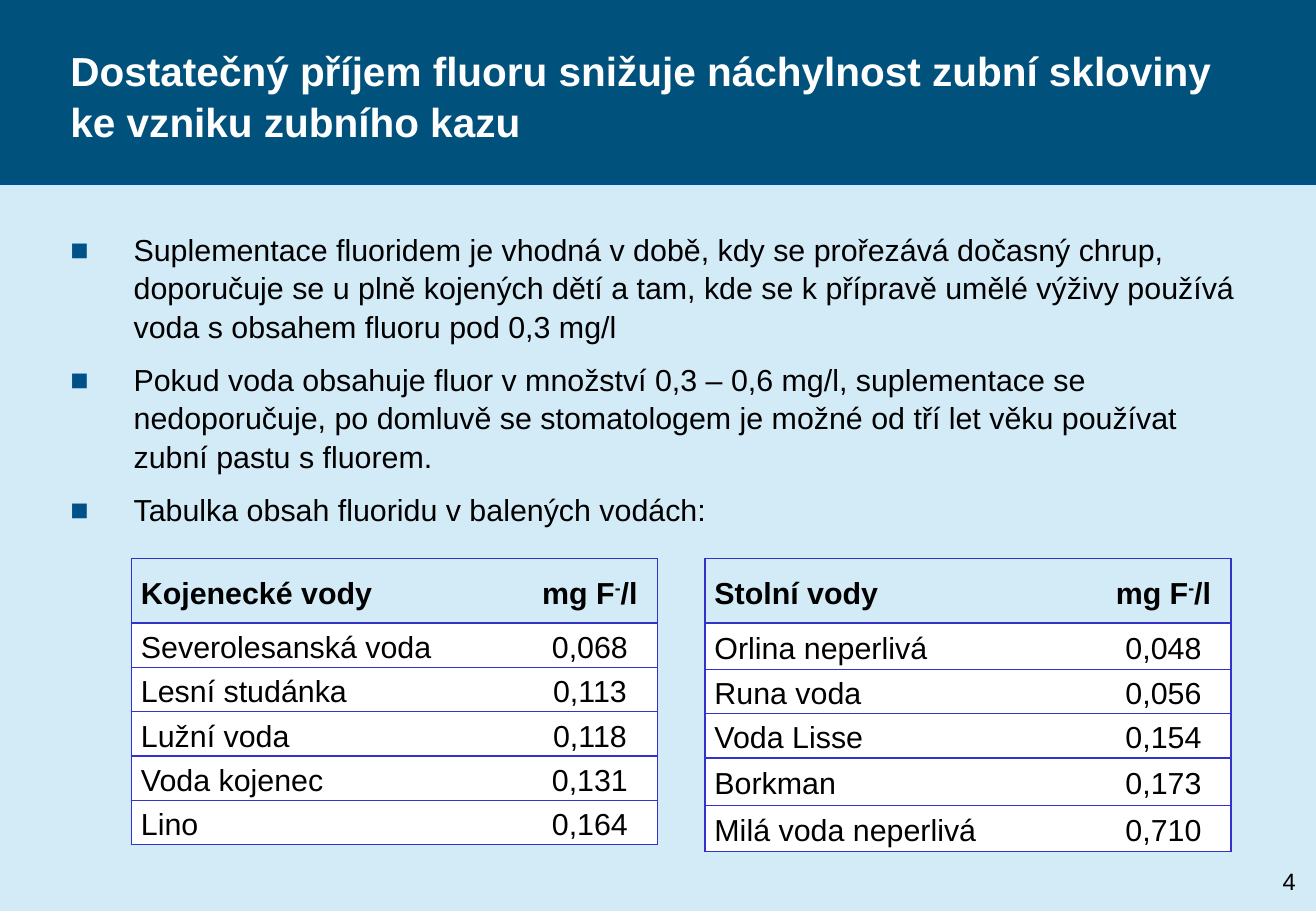
from dataclasses import dataclass

from lxml.etree import SubElement
from pptx import Presentation
from pptx.dml.color import RGBColor
from pptx.enum.shapes import MSO_CONNECTOR, MSO_SHAPE
from pptx.enum.text import MSO_ANCHOR, PP_ALIGN
from pptx.oxml.ns import qn
from pptx.util import Inches, Pt

TITLE = "Dostatečný příjem fluoru snižuje náchylnost zubní skloviny ke vzniku zubního kazu"
POINTS = [
    "Suplementace fluoridem je vhodná v době, kdy se prořezává dočasný chrup, "
    "doporučuje se u plně kojených dětí a tam, kde se k přípravě umělé výživy používá "
    "voda s obsahem fluoru pod 0,3 mg/l",
    "Pokud voda obsahuje fluor v množství 0,3 – 0,6 mg/l, suplementace se "
    "nedoporučuje, po domluvě se stomatologem je možné od tří let věku používat "
    "zubní pastu s fluorem.",
    "Tabulka obsah fluoridu v balených vodách:",
]
UNIT = [("mg F", 0), ("-", 30000), ("/l", 0)]
PAGE_NUMBER = "4"
INFANT_WATERS = [
    ("Kojenecké vody", UNIT),
    ("Severolesanská voda", "0,068"),
    ("Lesní studánka", "0,113"),
    ("Lužní voda", "0,118"),
    ("Voda kojenec", "0,131"),
    ("Lino", "0,164"),
]
TABLE_WATERS = [
    ("Stolní vody", UNIT),
    ("Orlina neperlivá", "0,048"),
    ("Runa voda", "0,056"),
    ("Voda Lisse", "0,154"),
    ("Borkman", "0,173"),
    ("Milá voda neperlivá", "0,710"),
]
# left edge, row heights, rows
TABLES = [
    (1.08, [0.53] + [0.34] * 5, INFANT_WATERS),
    (5.8, [0.53, 0.38, 0.34, 0.36, 0.39, 0.38], TABLE_WATERS),
]

WIDTH, HEIGHT = 10.83, 7.5
BAND_HEIGHT = HEIGHT / 5
MARGIN = 0.58
TEXT_WIDTH = WIDTH - 2 * MARGIN
TABLE_TOP = 4.6
COLUMNS = (3.22, 1.11)
INDENT = 0.52


@dataclass(frozen=True)
class Theme:
    font: str = "Arial"
    background: str = "D3EAF7"
    band: str = "00517C"
    accent: str = "005188"
    grid: str = "3333CC"
    white: str = "FFFFFF"
    black: str = "000000"
    title: int = 24
    body: int = 18
    number: int = 14
    spacing: float = 1.05
    table_spacing: float = 1.15


THEME = Theme()


def color(value):
    return RGBColor.from_string(value)


def style(para, size, ink=THEME.black, bold=False):
    para.font.name = THEME.font
    para.font.size = Pt(size)
    para.font.bold = bold
    para.font.color.rgb = color(ink)


def clear_insets(frame):
    frame.margin_left = frame.margin_right = frame.margin_top = frame.margin_bottom = 0


def add_bullet(para):
    properties = para._p.get_or_add_pPr()
    properties.set("marL", str(Inches(INDENT)))
    properties.set("indent", str(-Inches(INDENT)))
    tint = SubElement(properties, qn("a:buClr"))
    SubElement(tint, qn("a:srgbClr"), val=THEME.accent)
    SubElement(properties, qn("a:buFont"), typeface=THEME.font)
    SubElement(properties, qn("a:buChar"), char="■")


def add_borders(cell, open_side):
    """Draw every edge of the cell except the one facing its neighbour."""
    properties = cell._tc.get_or_add_tcPr()
    for side in ("lnL", "lnR", "lnT", "lnB"):
        edge = SubElement(properties, qn("a:" + side), w=str(Pt(1)))
        if side == open_side:
            SubElement(edge, qn("a:noFill"))
        else:
            paint = SubElement(edge, qn("a:solidFill"))
            SubElement(paint, qn("a:srgbClr"), val=THEME.grid)


def add_header(page):
    page.background.fill.solid()
    page.background.fill.fore_color.rgb = color(THEME.background)
    band = page.shapes.add_shape(
        MSO_SHAPE.RECTANGLE, 0, 0, Inches(WIDTH), Inches(BAND_HEIGHT))
    band.shadow.inherit = False
    band.fill.solid()
    band.fill.fore_color.rgb = color(THEME.band)
    band.line.fill.background()
    for start, end in ((MARGIN, WIDTH - MARGIN), (0, WIDTH)):
        rule = page.shapes.add_connector(
            MSO_CONNECTOR.STRAIGHT, Inches(start), Inches(BAND_HEIGHT),
            Inches(end), Inches(BAND_HEIGHT))
        rule.line.color.rgb = color(THEME.accent)
        rule.line.width = Pt(3)
        SubElement(rule._element.spPr, qn("a:effectLst"))

    title = page.shapes.title
    title._element.getparent().append(title._element)  # in front of the band
    title.left, title.top = Inches(MARGIN), Inches(0.15)
    title.width, title.height = Inches(TEXT_WIDTH), Inches(1.25)
    frame = title.text_frame
    frame.text = TITLE
    frame.word_wrap = True
    frame.vertical_anchor = MSO_ANCHOR.MIDDLE
    clear_insets(frame)
    para = frame.paragraphs[0]
    para.alignment = PP_ALIGN.LEFT
    para.line_spacing = THEME.spacing
    style(para, THEME.title, THEME.white, bold=True)


def add_points(page):
    box = page.shapes.add_textbox(
        Inches(MARGIN), Inches(1.89), Inches(TEXT_WIDTH), Inches(2.6))
    frame = box.text_frame
    frame.word_wrap = True
    clear_insets(frame)
    frame.text = "\n".join(POINTS)
    for para in frame.paragraphs:
        para.line_spacing = THEME.spacing
        para.space_after = Pt(THEME.body / 2)
        style(para, THEME.body)
        add_bullet(para)


def fill_cell(cell, content, is_header, is_value):
    cell.vertical_anchor = MSO_ANCHOR.MIDDLE
    cell.margin_left = cell.margin_right = Inches(0.08)
    cell.margin_top = cell.margin_bottom = Inches(0.01)
    add_borders(cell, "lnL" if is_value else "lnR")
    if is_header:
        cell.fill.background()
    else:
        cell.fill.solid()
        cell.fill.fore_color.rgb = color(THEME.white)
    para = cell.text_frame.paragraphs[0]
    para.alignment = PP_ALIGN.CENTER if is_value else PP_ALIGN.LEFT
    para.line_spacing = THEME.table_spacing
    style(para, THEME.body, bold=is_header)
    spans = [(content, 0)] if isinstance(content, str) else content
    for text, baseline in spans:
        span = para.add_run()
        span.text = text
        if baseline:
            span.font._element.set("baseline", str(baseline))


def add_water_table(page, left, heights, rows):
    frame = page.shapes.add_table(
        len(rows), len(COLUMNS), Inches(left), Inches(TABLE_TOP),
        Inches(sum(COLUMNS)), Inches(sum(heights)))
    table = frame.table
    table.first_row = table.horz_banding = False
    for column, width in zip(table.columns, COLUMNS):
        column.width = Inches(width)
    for i, (height, row) in enumerate(zip(heights, rows)):
        table.rows[i].height = Inches(height)
        for j, content in enumerate(row):
            fill_cell(table.cell(i, j), content, i == 0, j == 1)


def add_page_number(page):
    box = page.shapes.add_textbox(Inches(10.38), Inches(7), Inches(0.46), Inches(0.5))
    frame = box.text_frame
    frame.word_wrap = True
    frame.vertical_anchor = MSO_ANCHOR.MIDDLE
    frame.text = PAGE_NUMBER
    frame.paragraphs[0].alignment = PP_ALIGN.CENTER
    style(frame.paragraphs[0], THEME.number)


def main():
    deck = Presentation()
    deck.slide_width, deck.slide_height = Inches(WIDTH), Inches(HEIGHT)
    page = deck.slides.add_slide(deck.slide_layouts.get_by_name("Title Only"))
    add_header(page)
    add_points(page)
    add_page_number(page)
    for left, heights, rows in TABLES:
        add_water_table(page, left, heights, rows)
    deck.save("out.pptx")


if __name__ == "__main__":
    main()
